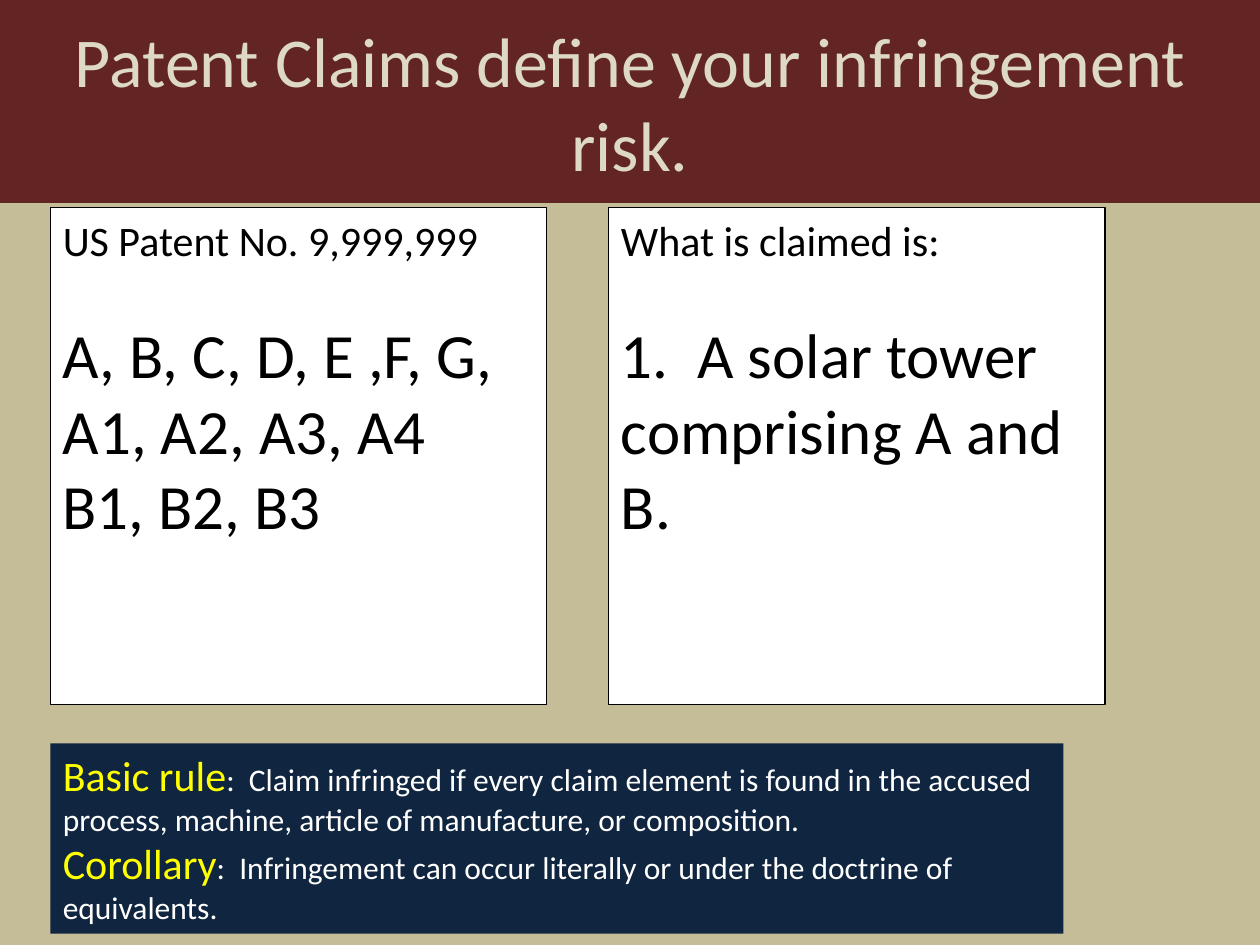
from pptx import Presentation
from pptx.dml.color import RGBColor
from pptx.enum.shapes import MSO_SHAPE
from pptx.enum.text import MSO_ANCHOR, PP_ALIGN
from pptx.util import Inches, Pt

RECT = MSO_SHAPE.RECTANGLE
TOP, MIDDLE = MSO_ANCHOR.TOP, MSO_ANCHOR.MIDDLE
LEFT, CENTER = PP_ALIGN.LEFT, PP_ALIGN.CENTER

COLORS = {
    "sand": "C4BD97", "maroon": "632523", "cream": "DDD9C3", "navy": "10253F",
    "white": "FFFFFF", "black": "000000", "yellow": "FFFF00",
}
HEADING, BODY, RULE_NAME, RULE_TEXT = 24, 36, 24, 18
HEADING_GAP = 29.3  # one line of heading text


def color(name):
    return RGBColor.from_string(COLORS[name])


class ClaimSlide:
    font = "Calibri"
    margins = {"margin_left": 0.1, "margin_right": 0.1,
               "margin_top": 0.05, "margin_bottom": 0.05}

    def __init__(self, presentation):
        self.slide = presentation.slides.add_slide(presentation.slide_layouts[6])

    def background(self, name):
        fill = self.slide.background.fill
        fill.solid()
        fill.fore_color.rgb = color(name)

    def box(self, bounds, fill, line=None, anchor=TOP):
        """Add a filled rectangle and return its text frame."""
        shape = self.slide.shapes.add_shape(RECT, *map(Inches, bounds))
        shape.shadow.inherit = False
        shape.fill.solid()
        shape.fill.fore_color.rgb = color(fill)
        if line:
            shape.line.color.rgb = color(line)
            shape.line.width = Pt(0.75)
        else:
            shape.line.fill.background()
        frame = shape.text_frame
        frame.word_wrap = True
        frame.vertical_anchor = anchor
        for side, length in self.margins.items():
            setattr(frame, side, Inches(length))
        return frame

    def paragraph(self, frame, runs, align=LEFT, gap=0):
        """Write (text, size, color) runs in the next free paragraph."""
        first = frame.paragraphs[0]
        paragraph = frame.add_paragraph() if first.runs else first
        layout = {"alignment": align, "space_before": Pt(gap)}
        for key, value in layout.items():
            setattr(paragraph, key, value)
        for text, size, name in runs:
            run = paragraph.add_run()
            run.text = text
            for key, value in {"name": self.font, "size": Pt(size)}.items():
                setattr(run.font, key, value)
            run.font.color.rgb = color(name)

    def title(self, text):
        frame = self.box((0, 0, 10, 1.61), "maroon", anchor=MIDDLE)
        self.paragraph(frame, [(text, 40, "cream")], CENTER)

    def page(self, left, heading, lines):
        frame = self.box((left, 1.65, 3.94, 3.94), "white", line="black")
        self.paragraph(frame, [(heading, HEADING, "black")])
        for index, line in enumerate(lines):
            self.paragraph(frame, [(line, BODY, "black")],
                           gap=0 if index else HEADING_GAP)

    def rules(self, rules):
        frame = self.box((0.4, 5.9, 8.04, 1.51), "navy")
        for name, text in rules:
            self.paragraph(frame, [(name, RULE_NAME, "yellow"),
                                   (text, RULE_TEXT, "white")])


def main():
    presentation = Presentation()
    presentation.slide_width = Inches(10)
    presentation.slide_height = Inches(7.5)
    claims = ClaimSlide(presentation)
    claims.background("sand")

    # Title band
    claims.title("Patent Claims define your infringement risk.")

    # Patent disclosure and its claim
    claims.page(0.4, "US Patent No. 9,999,999",
                ["A, B, C, D, E ,F, G, A1, A2, A3, A4", "B1, B2, B3"])
    claims.page(4.83, "What is claimed is:",
                ["1.  A solar tower comprising A and B."])

    # Infringement rules
    claims.rules([
        ("Basic rule", ":  Claim infringed if every claim element is found in the "
                       "accused process, machine, article of manufacture, or "
                       "composition."),
        ("Corollary", ":  Infringement can occur literally or under the doctrine "
                      "of equivalents."),
    ])

    presentation.save("out.pptx")


if __name__ == "__main__":
    main()
